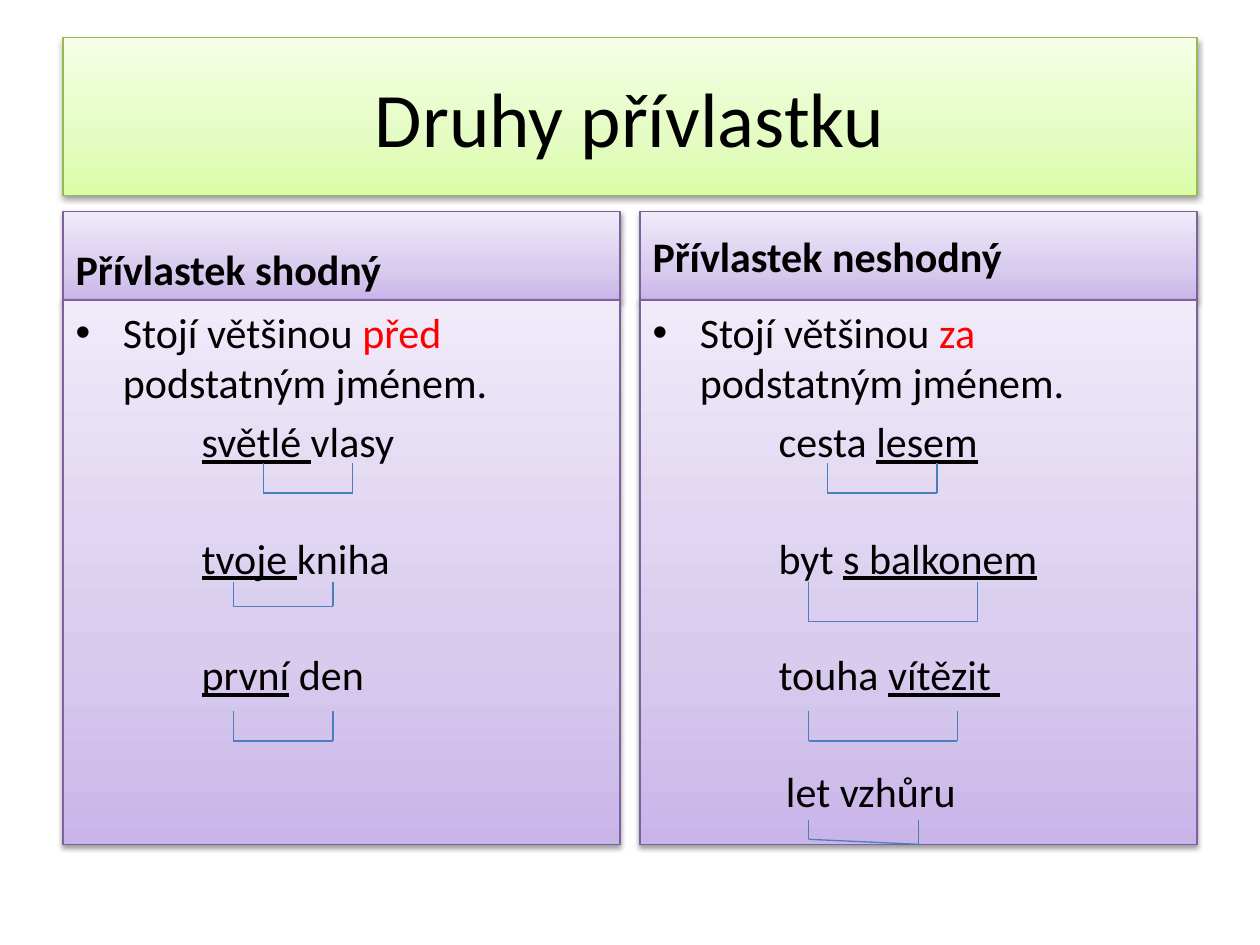
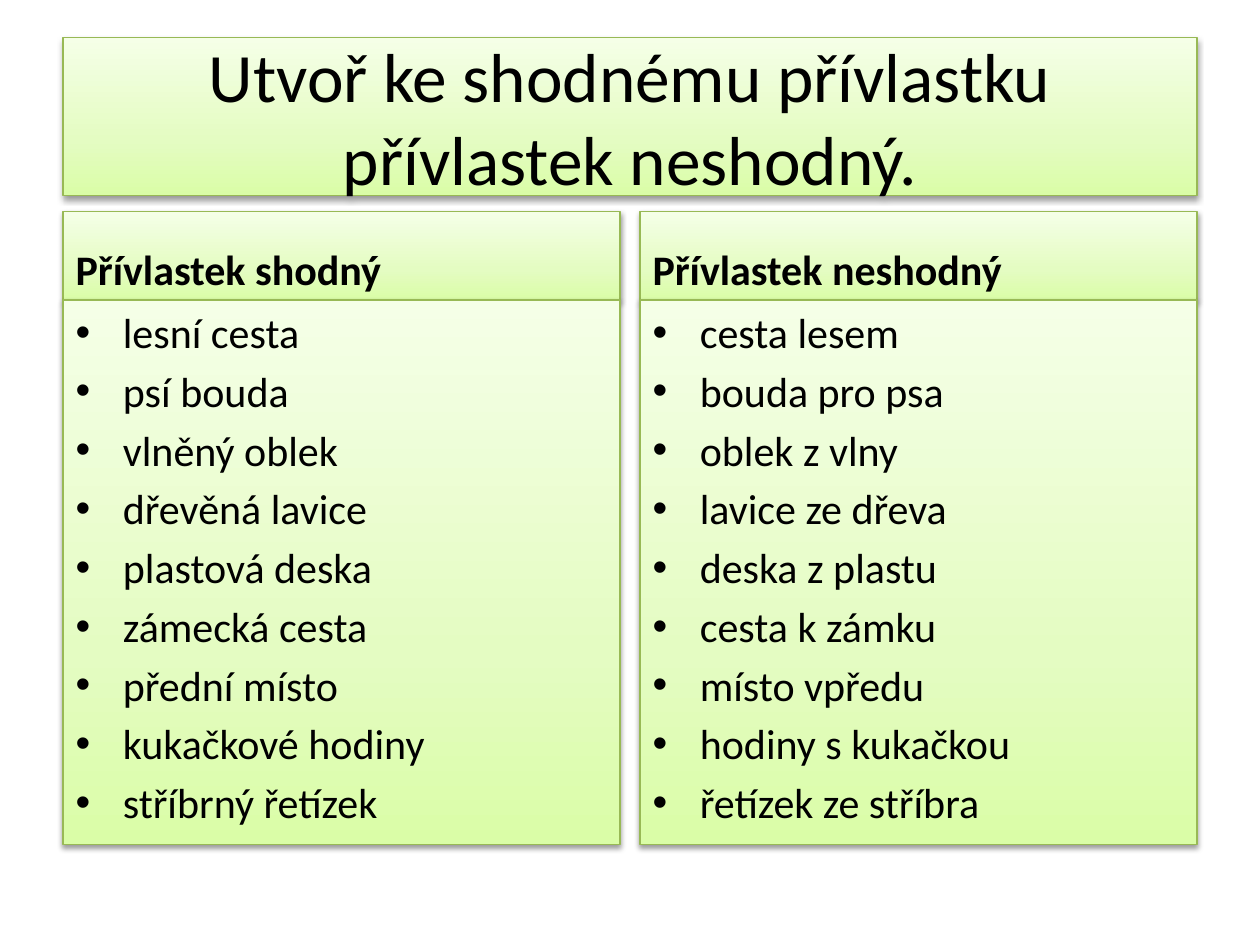
from lxml import etree
from pptx import Presentation
from pptx.dml.color import RGBColor
from pptx.enum.shapes import MSO_CONNECTOR
from pptx.enum.text import MSO_ANCHOR, MSO_AUTO_SIZE
from pptx.oxml import parse_xml
from pptx.oxml.ns import nsdecls, qn
from pptx.util import Cm, Pt

COLORS = {"text": "000000", "accent": "FF0000", "bracket": "4B7EBC", "shadow": "000000"}
THEMES = {
    "green": {"line": "98B955", "stops": {0: "DAFDA7", 35: "E4FCC2", 100: "F5FFE7"}},
    "purple": {"line": "7D60A0", "stops": {0: "C9B5E8", 35: "D8CBEE", 100: "F0EAF9"}},
}
FONT = "Calibri"
TITLE_BOX = (1.27, 0.76, 22.86, 3.18)
COLUMN_BOXES = [(left, 4.27, 11.23, 12.75) for left in (1.27, 12.9)]
HEADER_HEIGHT = 1.78
HEADERS = ("Přívlastek shodný", "Přívlastek neshodný")
EXAMPLE_INDENT = 2.54
EXAMPLE_GAP = 37.8

RULES = ("před", "za")
EXAMPLES = (
    [[("světlé ", True), ("vlasy", False)],
     [("tvoje ", True), ("kniha", False)],
     [("první", True), (" den", False)]],
    [[("cesta ", False), ("lesem", True)],
     [("byt ", False), ("s balkonem", True)],
     [("touha ", False), ("vítězit ", True)],
     [("let vzhůru", False)]],
)
BRACKETS = (
    [(4.04, 5.84, 3.28, 3.89, 3.89),
     (3.43, 5.44, 5.69, 6.17, 6.17),
     (3.43, 5.44, 8.28, 8.89, 8.89)],
    [(3.78, 5.99, 3.28, 3.89, 3.89),
     (3.4, 6.81, 5.69, 6.48, 6.48),
     (3.4, 6.4, 8.28, 8.89, 8.89),
     (3.4, 5.61, 10.49, 10.87, 10.97)],
)
PAIRS = [
    ("lesní cesta", "cesta lesem"),
    ("psí bouda", "bouda pro psa"),
    ("vlněný oblek", "oblek z vlny"),
    ("dřevěná lavice", "lavice ze dřeva"),
    ("plastová deska", "deska z plastu"),
    ("zámecká cesta", "cesta k zámku"),
    ("přední místo", "místo vpředu"),
    ("kukačkové hodiny", "hodiny s kukačkou"),
    ("stříbrný řetízek", "řetízek ze stříbra"),
]


def add_text(p, text, size=24, color="text", bold=False, underline=False):
    """Append a formatted run to a paragraph."""
    r = p.add_run()
    r.text = text
    r.font.name, r.font.size = FONT, Pt(size)
    r.font.bold, r.font.underline = bold, underline
    r.font.color.rgb = RGBColor.from_string(COLORS[color])


def style_panel(sp, box, theme, anchor):
    """Place a placeholder and give it a gradient, an outline and a shadow."""
    sp.left, sp.top, sp.width, sp.height = map(Cm, box)
    sp.line.color.rgb = RGBColor.from_string(theme["line"])
    sp.line.width = Pt(0.75)
    stops = "".join(f'<a:gs pos="{pos * 1000}"><a:srgbClr val="{color}"/></a:gs>'
                    for pos, color in theme["stops"].items())
    ln = sp.element.spPr.find(qn("a:ln"))
    ln.addprevious(parse_xml(
        f'<a:gradFill {nsdecls("a")} rotWithShape="1"><a:gsLst>{stops}</a:gsLst>'
        '<a:lin ang="16200000" scaled="0"/></a:gradFill>'))
    ln.addnext(parse_xml(
        f'<a:effectLst {nsdecls("a")}><a:outerShdw blurRad="40000" dist="20000" '
        f'dir="5400000" rotWithShape="0"><a:srgbClr val="{COLORS["shadow"]}">'
        '<a:alpha val="38000"/></a:srgbClr></a:outerShdw></a:effectLst>'))
    tf = sp.text_frame
    tf.word_wrap, tf.auto_size = True, MSO_AUTO_SIZE.NONE
    tf.vertical_anchor = anchor
    return tf


def add_title(s, box, text, size):
    """Fill the title band."""
    tf = style_panel(s.shapes.title, box, THEMES["green"], MSO_ANCHOR.MIDDLE)
    add_text(tf.paragraphs[0], text, size=size)


def add_column(s, box, index, theme, anchor=MSO_ANCHOR.BOTTOM):
    """Fill a column header and return the text frame and box of its body."""
    left, top, width, height = box
    header, body = (s.placeholders[2 * index + n] for n in (1, 2))
    tf = style_panel(header, (left, top, width, HEADER_HEIGHT), theme, anchor)
    add_text(tf.paragraphs[0], HEADERS[index], bold=True)
    body_box = (left, top + HEADER_HEIGHT, width, height - HEADER_HEIGHT)
    return style_panel(body, body_box, theme, MSO_ANCHOR.TOP), body_box


def add_examples(tf, examples):
    """Add indented phrases without bullets, with wide gaps between them."""
    for i, parts in enumerate(examples):
        p = tf.add_paragraph()
        if i:
            p.space_before = Pt(EXAMPLE_GAP)
        indent = EXAMPLE_INDENT + (0.15 if len(parts) == 1 else 0)
        pPr = p._p.get_or_add_pPr()
        pPr.set("marL", str(Cm(indent)))
        pPr.set("indent", "0")
        etree.SubElement(pPr, qn("a:buNone"))
        for text, underline in parts:
            add_text(p, text, underline=underline)


def add_bracket(s, box, x1, x2, top, bottom1, bottom2):
    """Join two words with a three-sided bracket below them."""
    points = [(Cm(box[0] + x), Cm(box[1] + y))
              for x, y in ((x1, top), (x1, bottom1), (x2, bottom2), (x2, top))]
    for start, end in zip(points, points[1:]):
        line = s.shapes.add_connector(MSO_CONNECTOR.STRAIGHT, *start, *end)
        line.line.color.rgb = RGBColor.from_string(COLORS["bracket"])
        line.line.width = Pt(0.75)
        etree.SubElement(line.element.spPr, qn("a:effectLst"))


def build_kinds(s):
    """Build the slide that explains both kinds of attribute."""
    add_title(s, TITLE_BOX, "Druhy přívlastku", 44)
    anchors = (MSO_ANCHOR.BOTTOM, MSO_ANCHOR.MIDDLE)
    for i, box in enumerate(COLUMN_BOXES):
        tf, body_box = add_column(s, box, i, THEMES["purple"], anchors[i])
        p = tf.paragraphs[0]
        add_text(p, "Stojí většinou ")
        add_text(p, RULES[i], color="accent")
        add_text(p, " podstatným jménem.")
        add_examples(tf, EXAMPLES[i])
        for bracket in BRACKETS[i]:
            add_bracket(s, body_box, *bracket)


def build_exercise(s):
    """Build the slide that pairs the phrases of both kinds."""
    add_title(s, TITLE_BOX, "Utvoř ke shodnému přívlastku přívlastek neshodný.", 39.6)
    for i, box in enumerate(COLUMN_BOXES):
        tf, _ = add_column(s, box, i, THEMES["green"])
        for n, pair in enumerate(PAIRS):
            add_text(tf.add_paragraph() if n else tf.paragraphs[0], pair[i])


def main():
    """Build and save the presentation."""
    prs = Presentation()
    prs.slide_width, prs.slide_height = Cm(25.4), Cm(19.05)
    for build in (build_kinds, build_exercise):
        build(prs.slides.add_slide(prs.slide_layouts.get_by_name("Comparison")))
    prs.save("out.pptx")


if __name__ == "__main__":
    main()
